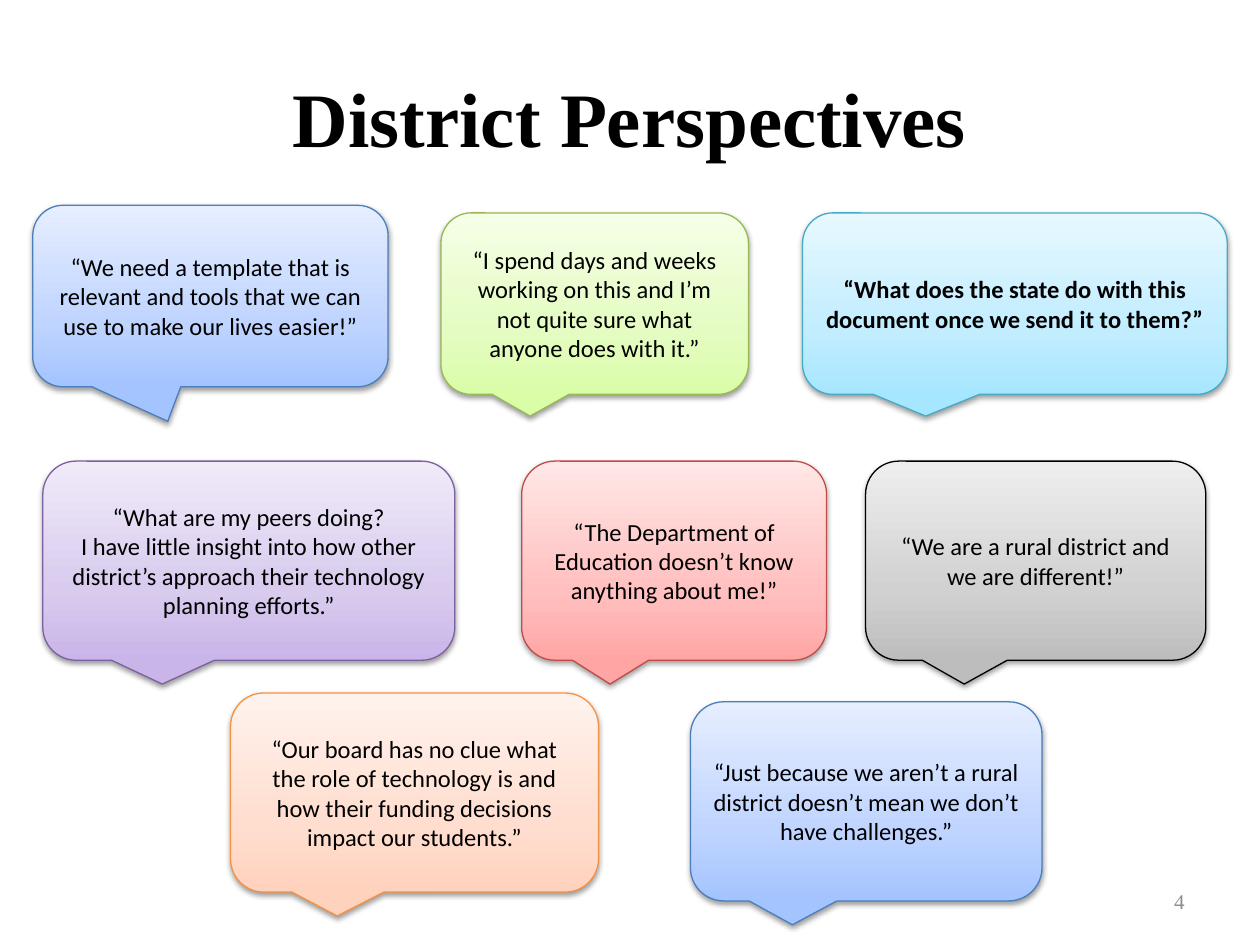
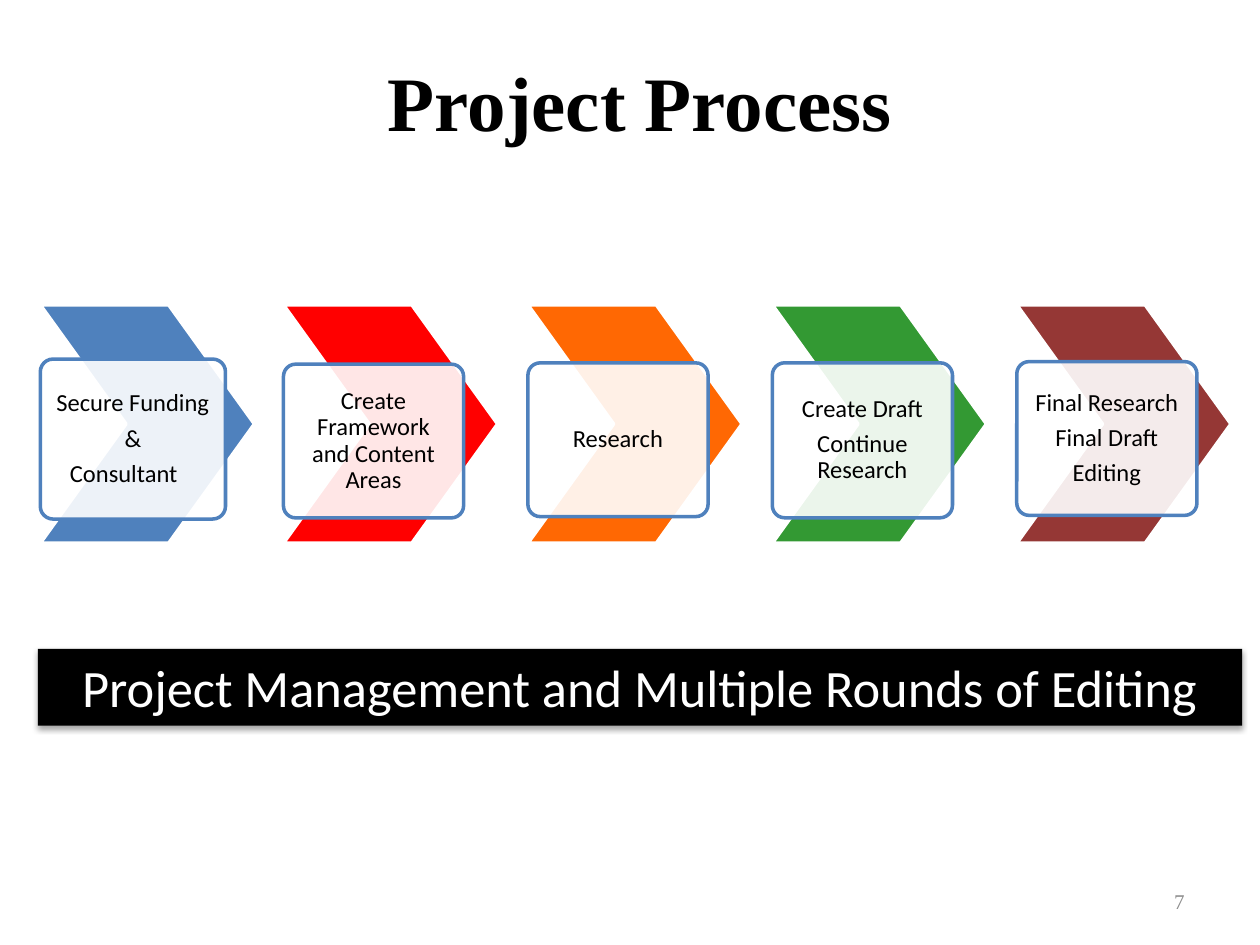
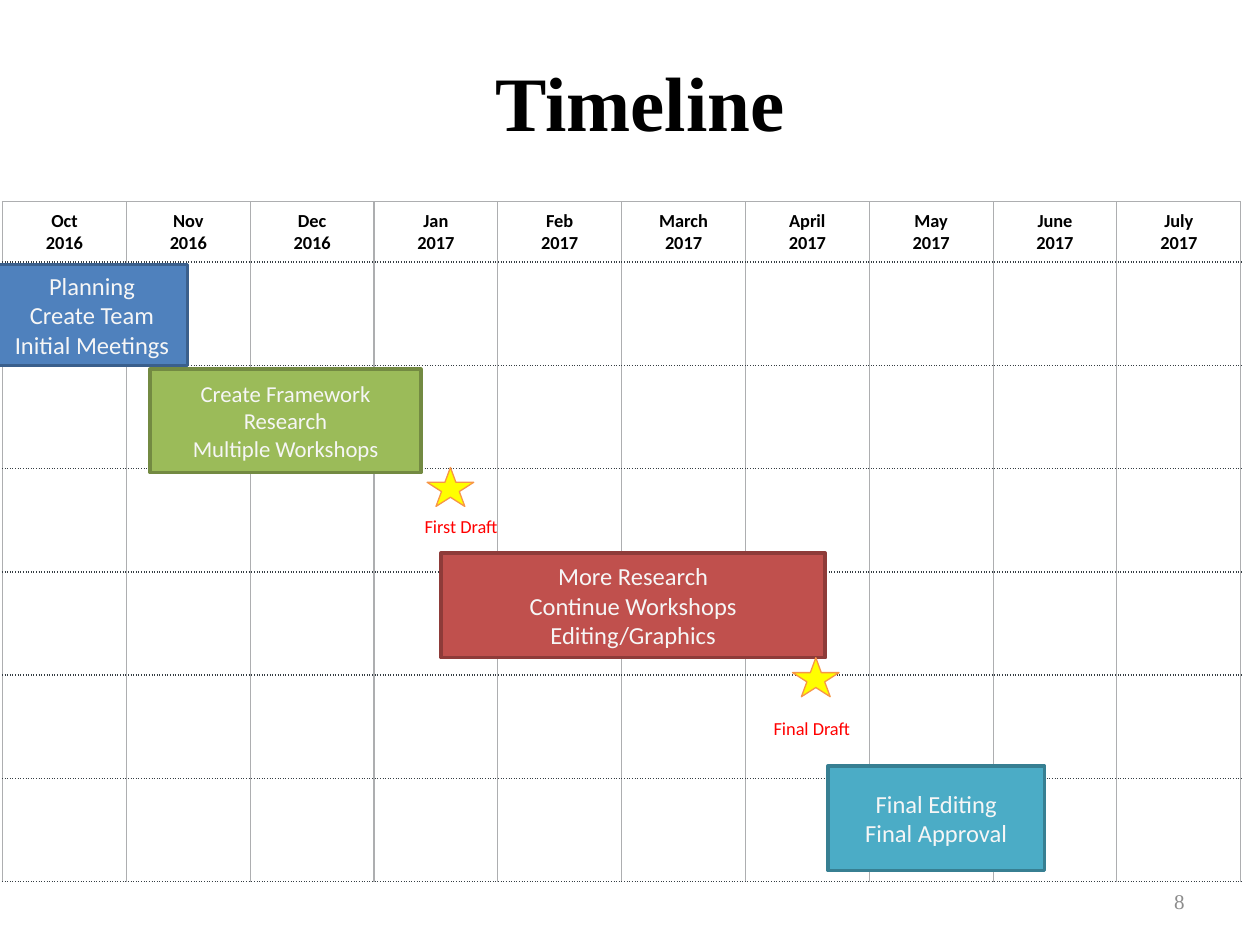
"""Builds three slides on district perspectives, the project process and its timeline."""
from copy import deepcopy

from lxml import etree
from pptx import Presentation
from pptx import util as u
from pptx.dml.color import RGBColor
from pptx.enum import shapes, text
from pptx.oxml import ns

SCALE = 9144
SHAPE = shapes.MSO_SHAPE
ANCHOR = text.MSO_ANCHOR
ALIGN = text.PP_ALIGN
SANS, SERIF = "Calibri", "Times New Roman"

rgb = RGBColor.from_string
BLACK, WHITE, OFF_WHITE = rgb("000000"), rgb("FFFFFF"), rgb("F6F6F6")
GRAY, GRID, DOTS = rgb("8C8C8C"), rgb("ADAEB0"), rgb("363E44")
BLUE, DARK_BLUE = rgb("4F81BD"), rgb("3A5F8C")
GREEN, DARK_GREEN = rgb("9BBB59"), rgb("738A42")
BRICK, DARK_BRICK = rgb("C0504D"), rgb("8E3B39")
TEAL, DARK_TEAL = rgb("4BACC6"), rgb("377F92")
RED, ORANGE, LEAF, MAROON = rgb("FF0000"), rgb("FF6803"), rgb("339933"), rgb("953735")
YELLOW, AMBER = rgb("FFFF00"), rgb("F79646")

BLUE_TINT = [rgb(c) for c in ("A4C4FF", "BFD4FF", "E6EEFF", "4B7EBC")]
GREEN_TINT = [rgb(c) for c in ("DAFDA7", "E4FCC2", "F5FFE7", "98B955")]
CYAN_TINT = [rgb(c) for c in ("A7E6FF", "C1EDFF", "E7F8FF", "46AAC5")]
PURPLE_TINT = [rgb(c) for c in ("C9B5E8", "D8CBEE", "F0EAF9", "7D60A0")]
RED_TINT = [rgb(c) for c in ("FFA6A5", "FFC0BF", "FFE7E7", "BF4C48")]
GRAY_TINT = [rgb(c) for c in ("BDBDBD", "D1D1D1", "EEEEEE", "000000")]
ORANGE_TINT = [rgb(c) for c in ("FFD2BD", "FFDED0", "FFF2ED", "F69240")]

CALLOUTS = [
    ((26, 163, 282, 144), BLUE_TINT,
     ["“We need a template that is relevant and tools that we can use to make our lives easier!”"]),
    ((350, 169, 244, 144), GREEN_TINT,
     ["“I spend days and weeks working on this and I’m not quite sure what anyone does with it.”"]),
    ((637, 169, 337, 144), CYAN_TINT,
     ["“What does the state do with this document once we send it to them?”"]),
    ((34, 366, 327, 158), PURPLE_TINT,
     ["“What are my peers doing?",
      "I have little insight into how other district’s approach their technology planning efforts.”"]),
    ((414, 366, 242, 158), RED_TINT,
     ["“The Department of Education doesn’t know anything about me!”"]),
    ((687, 366, 270, 158), GRAY_TINT,
     ["“We are a rural district and we are different!”"]),
    ((183, 550, 292, 158), ORANGE_TINT,
     ["“Our board has no clue what the role of technology is and how their funding decisions "
      "impact our students.”"]),
    ((548, 557, 279, 158), BLUE_TINT,
     ["“Just because we aren’t a rural district doesn’t mean we don’t have challenges.”"]),
]
STEPS = [
    (BLUE, (285, 147, 127), ["Secure Funding", "&", "Consultant\t"]),
    (RED, (289, 143, 122), ["Create Framework and Content Areas"]),
    (ORANGE, (288, 143, 122), ["Research"]),
    (LEAF, (288, 143, 123), ["Create Draft", "Continue Research"]),
    (MAROON, (287, 143, 122), ["Final Research", "Final Draft", "Editing"]),
]
MONTHS = ["Oct", "Nov", "Dec", "Jan", "Feb", "March", "April", "May", "June", "July"]
TASKS = [
    ((-3, 210, 152, 80), BLUE, DARK_BLUE, 14, ["Planning", "Create Team", "Initial Meetings"]),
    ((119, 293, 215, 82), GREEN, DARK_GREEN, 13,
     ["Create Framework", "Research", "Multiple Workshops"]),
    ((350, 439, 305, 83), BRICK, DARK_BRICK, 14,
     ["More Research", "Continue Workshops", "Editing/Graphics"]),
    ((657, 608, 172, 83), TEAL, DARK_TEAL, 14, ["Final Editing", "Final Approval"]),
]
MILESTONES = [((339, 371), (337, 409), "First Draft"), ((629, 522), (614, 569), "Final Draft")]


def px(n):
    return u.Emu(n * SCALE)


def put(obj, **fmt):
    for name, value in fmt.items():
        setattr(obj, name, value)


def sub(parent, tag, **attrs):
    return etree.SubElement(parent, ns.qn(tag), {k: str(v) for k, v in attrs.items()})


class Deck:
    def __init__(self):
        self.prs = Presentation()
        put(self.prs, slide_width=px(1000), slide_height=px(750))

    def new_slide(self, title, number, title_at):
        self.s = self.prs.slides.add_slide(self.prs.slide_layouts[6])
        self.label((717, 695, 233, 40), [str(number)], align=ALIGN.RIGHT,
                   name=SERIF, size=u.Pt(12), color=GRAY)
        self.label((*title_at, 900, 125), [title], name=SERIF, size=u.Pt(44), bold=True)

    def add_lines(self, tf, lines, align=ALIGN.CENTER, color=BLACK, para=None, **font):
        for i, line in enumerate(lines):
            p = tf.add_paragraph() if i else tf.paragraphs[0]
            put(p, alignment=align, **(para or {}))
            r = p.add_run()
            r.text = line
            put(r.font, **{"name": SANS, "size": u.Pt(14), **font})
            r.font.color.rgb = color

    def label(self, box, lines, anchor=ANCHOR.MIDDLE, inset=None, **fmt):
        tf = self.s.shapes.add_textbox(*map(px, box)).text_frame
        self.frame(tf, anchor, inset)
        self.add_lines(tf, lines, **fmt)

    def frame(self, tf, anchor, inset=None):
        put(tf, word_wrap=True, vertical_anchor=anchor)
        if inset is not None:
            for side in ("left", "top", "right", "bottom"):
                setattr(tf, "margin_" + side, px(inset))

    def shape(self, kind, box, fill=None, line=None, width=2, adj=(), lines=(),
              anchor=ANCHOR.MIDDLE, inset=None, **fmt):
        sp = self.s.shapes.add_shape(kind, *map(px, box))
        sp.shadow.inherit = False
        for i, value in enumerate(adj):
            sp.adjustments[i] = value
        if fill is not None:
            sp.fill.solid()
            sp.fill.fore_color.rgb = fill
        if line is None:
            sp.line.fill.background()
        else:
            sp.line.color.rgb = line
            sp.line.width = u.Pt(width)
        self.frame(sp.text_frame, anchor, inset)
        self.add_lines(sp.text_frame, lines, **fmt)
        return sp

    def drop_shadow(self, sp, dist, alpha):
        effects = sp._element.spPr.find(ns.qn("a:effectLst"))
        shadow = sub(effects, "a:outerShdw", blurRad=40000, dist=dist, dir=5400000, rotWithShape=0)
        sub(sub(shadow, "a:srgbClr", val=BLACK), "a:alpha", val=alpha * 1000)

    def callout(self, box, tint, lines, adj, bold):
        *stops, edge = tint
        sp = self.shape(SHAPE.ROUNDED_RECTANGULAR_CALLOUT, box, line=edge, width=0.75,
                        adj=adj, lines=lines, bold=bold)
        sp.fill.gradient()
        sp.fill.gradient_angle = 90
        gs = sp._element.spPr.find(".//" + ns.qn("a:gsLst"))
        gs.insert(1, deepcopy(gs[0]))
        for stop, color, position in zip(sp.fill.gradient_stops, stops, (0, 0.35, 1)):
            stop.color.rgb = color
            stop.position = position
        self.drop_shadow(sp, 20000, 38)

    def step(self, x, color, card, lines):
        self.shape(SHAPE.CHEVRON, (x, 242, 170, 189), color, WHITE, adj=[0.4])
        top, width, height = card
        sp = self.shape(SHAPE.ROUNDED_RECTANGLE, (x, top, width, height), WHITE, BLUE,
                        adj=[0.08], lines=lines, inset=8,
                        para={"line_spacing": 0.9, "space_after": u.Pt(4.9)})
        fill = sp._element.spPr.find(ns.qn("a:solidFill"))
        sub(fill[0], "a:alpha", val=90000)

    def border(self, cell, side, color, width, dash):
        ln = sub(cell._tc.get_or_add_tcPr(), "a:ln" + side, w=u.Pt(width))
        sub(sub(ln, "a:solidFill"), "a:srgbClr", val=color)
        sub(ln, "a:prstDash", val=dash)

    def calendar(self, box, months, heights):
        table = self.s.shapes.add_table(len(heights), len(months), *map(px, box)).table
        put(table, first_row=False, horz_banding=False)
        for column in table.columns:
            column.width = px(box[2]) // len(months)
        for row, height in zip(table.rows, heights):
            row.height = px(height)
        solid, dotted = (GRID, 0.75, "solid"), (DOTS, 1, "sysDot")
        for i, row in enumerate(table.rows):
            for cell in row.cells:
                for side, style in zip("LRTB", (solid, solid, dotted if i else solid, dotted)):
                    self.border(cell, side, *style)
                cell.fill.solid()
                cell.fill.fore_color.rgb = WHITE
        for i, month in enumerate(months):
            cell = table.cell(0, i)
            put(cell, vertical_anchor=ANCHOR.BOTTOM, margin_left=px(13), margin_right=px(13),
                margin_top=px(6), margin_bottom=px(6))
            self.add_lines(cell.text_frame, [month, "2016" if i < 3 else "2017"],
                           size=u.Pt(10.5), bold=True)


def main():
    deck = Deck()

    deck.new_slide("District Perspectives", 4, (50, 30))
    for i, (box, tint, lines) in enumerate(CALLOUTS):
        tail = (-0.21, 0.62) if i else (-0.12, 0.69)
        deck.callout(box, tint, lines, tail, bold=tint is CYAN_TINT)

    deck.new_slide("Project Process", 7, (58, 17))
    for i, (color, card, lines) in enumerate(STEPS):
        deck.step(32 + i * 775 // 4, color, card, lines)
    banner = deck.shape(SHAPE.RECTANGLE, (30, 515, 956, 61), BLACK, anchor=ANCHOR.TOP,
                        lines=["Project Management and Multiple Rounds of Editing"],
                        size=u.Pt(30), color=WHITE)
    deck.drop_shadow(banner, 23000, 35)

    deck.new_slide("Timeline", 8, (58, 17))
    deck.calendar((2, 160, 983, 540), MONTHS, [48] + [82] * 6)
    for box, fill, line, size, lines in TASKS:
        deck.shape(SHAPE.RECTANGLE, box, fill, line, lines=lines, size=u.Pt(size), color=OFF_WHITE)
    for star_at, label_at, name in MILESTONES:
        deck.shape(SHAPE.STAR_5_POINT, (*star_at, 37, 31), YELLOW, AMBER, width=0.75)
        deck.label((*label_at, 97, 15), [name], anchor=ANCHOR.TOP, inset=0,
                   align=ALIGN.LEFT, size=u.Pt(10.5), color=RED)

    deck.prs.save("out.pptx")


if __name__ == "__main__":
    main()
